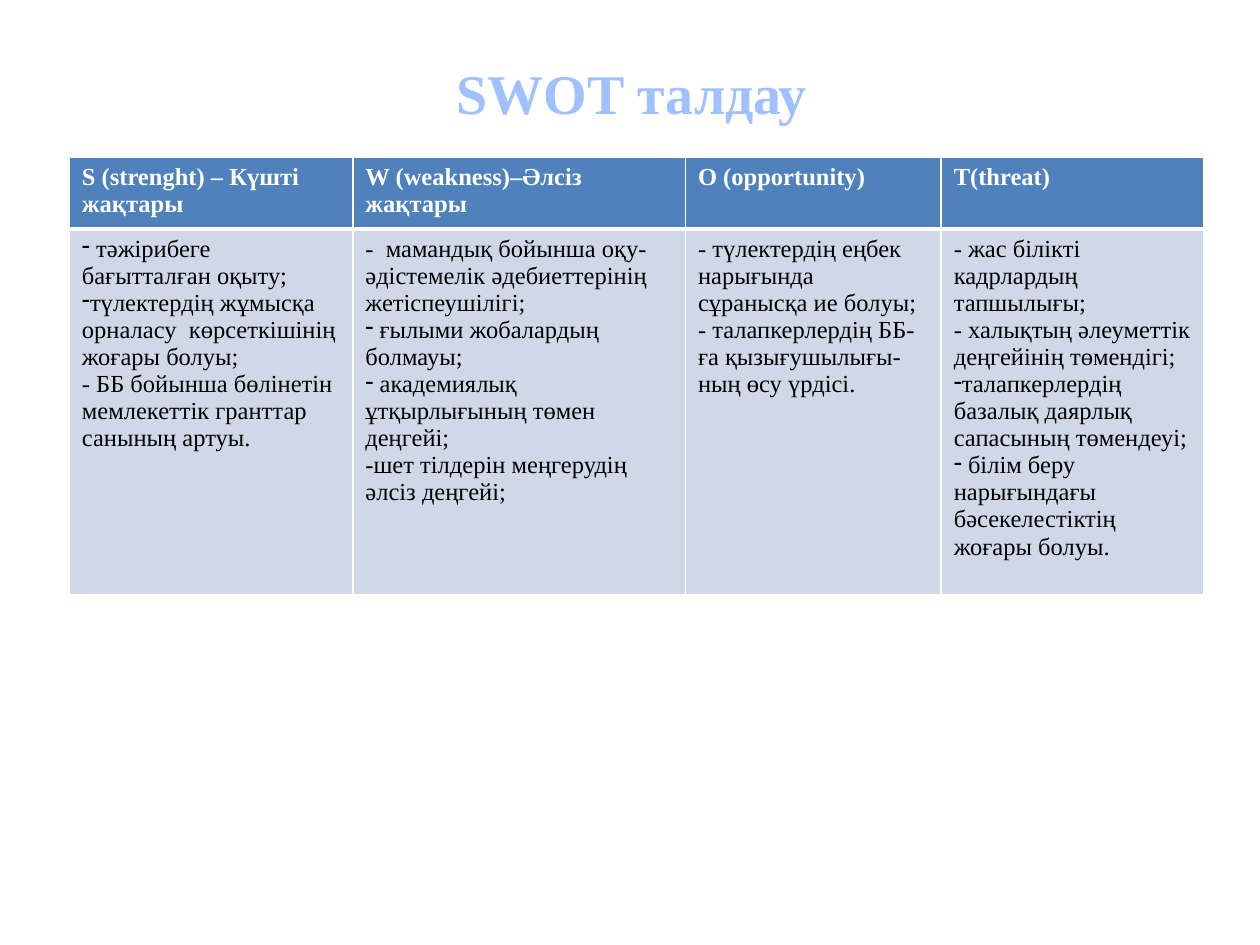
from dataclasses import dataclass

import pptx
import pptx.dml.color
import pptx.enum.text
import pptx.oxml.ns
import pptx.util
from lxml import etree
from pptx.util import Inches

FONT = "Times New Roman"
WHITE, BLACK = "FFFFFF", "000000"
TITLE_BLUE, HEADER_BLUE, BODY_BLUE = "A0C1FF", "4F81BD", "D0D8E8"
TITLE_FORMAT = {"name": FONT, "size": pptx.util.Pt(32), "bold": True}
HEADER_FORMAT = {"name": FONT, "size": pptx.util.Pt(14), "bold": True}
POINT_FORMAT = HEADER_FORMAT | {"bold": False}
HEADER_HEIGHT, BODY_HEIGHT = 0.54, 2.88


@dataclass(frozen=True)
class Point:
    text: str
    dash_bullet: bool = False


@dataclass(frozen=True)
class Aspect:
    heading: str
    width: float
    points: tuple[Point, ...]


ASPECTS = (
    Aspect("S (strenght) – Күшті жақтары", 2.25, (
        Point(" тәжірибеге бағытталған оқыту;", True),
        Point("түлектердің жұмысқа орналасу  көрсеткішінің жоғары болуы;", True),
        Point("- ББ бойынша бөлінетін мемлекеттік гранттар санының артуы."),
    )),
    Aspect("W (weakness)–Әлсіз жақтары", 2.64, (
        Point("-  мамандық бойынша оқу-әдістемелік әдебиеттерінің жетіспеушілігі;"),
        Point(" ғылыми жобалардың болмауы;", True),
        Point(" академиялық ұтқырлығының төмен деңгейі;", True),
        Point("-шет тілдерін меңгерудің әлсіз деңгейі;"),
    )),
    Aspect("O (opportunity)", 2.03, (
        Point("- түлектердің еңбек нарығында сұранысқа ие болуы;"),
        Point("- талапкерлердің ББ-ға қызығушылығы-ның өсу үрдісі."),
    )),
    Aspect("T(threat)", 2.08, (
        Point("- жас білікті кадрлардың тапшылығы;"),
        Point("- халықтың әлеуметтік деңгейінің төмендігі;"),
        Point("талапкерлердің базалық даярлық сапасының төмендеуі;", True),
        Point(" білім беру нарығындағы бәсекелестіктің жоғары болуы.", True),
    )),
)


def rgb(value: str) -> pptx.dml.color.RGBColor:
    return pptx.dml.color.RGBColor.from_string(value)


def add_child(parent, tag: str, **attributes: str):
    return etree.SubElement(parent, pptx.oxml.ns.qn(tag), attributes)


def write(paragraph, text: str, color: str, font_format: dict) -> None:
    run = paragraph.add_run()
    run.text = text
    for attribute, value in font_format.items():
        setattr(run.font, attribute, value)
    run.font.color.rgb = rgb(color)


def add_dash_bullet(paragraph) -> None:
    properties = paragraph._p.get_or_add_pPr()
    properties.set("marL", "0")
    properties.set("indent", "0")
    add_child(properties, "a:buFontTx")
    add_child(properties, "a:buChar", char="-")


def style_cell(cell, fill: str, top: float, bottom: float) -> None:
    """Set white borders, with top and bottom widths in points, and the fill."""
    properties = cell._tc.get_or_add_tcPr()
    for side, width in {"L": 1, "R": 1, "T": top, "B": bottom}.items():
        border = add_child(properties, f"a:ln{side}", w=str(pptx.util.Pt(width)))
        add_child(add_child(border, "a:solidFill"), "a:srgbClr", val=WHITE)
    cell.fill.solid()
    cell.fill.fore_color.rgb = rgb(fill)


def add_title(slide, text: str) -> None:
    frame = slide.shapes.add_textbox(
        Inches(0.5), Inches(0.3), Inches(9.03), Inches(0.87)).text_frame
    frame.word_wrap = True
    frame.vertical_anchor = pptx.enum.text.MSO_ANCHOR.MIDDLE
    heading = frame.paragraphs[0]
    heading.alignment = pptx.enum.text.PP_ALIGN.CENTER
    write(heading, text, TITLE_BLUE, TITLE_FORMAT)


def fill_aspect(header, body, aspect: Aspect) -> None:
    style_cell(header, HEADER_BLUE, top=1, bottom=3)
    write(header.text_frame.paragraphs[0], aspect.heading, WHITE, HEADER_FORMAT)
    style_cell(body, BODY_BLUE, top=3, bottom=1)
    frame = body.text_frame
    for index, point in enumerate(aspect.points):
        paragraph = frame.add_paragraph() if index else frame.paragraphs[0]
        if point.dash_bullet:
            add_dash_bullet(paragraph)
        write(paragraph, point.text, BLACK, POINT_FORMAT)


def add_swot_table(slide, aspects: tuple[Aspect, ...]) -> None:
    table = slide.shapes.add_table(
        2, len(aspects), Inches(0.55), Inches(1.25),
        Inches(sum(aspect.width for aspect in aspects)),
        Inches(HEADER_HEIGHT + BODY_HEIGHT)).table
    for row, height in zip(table.rows, (HEADER_HEIGHT, BODY_HEIGHT)):
        row.height = Inches(height)
    for column, aspect in enumerate(aspects):
        table.columns[column].width = Inches(aspect.width)
        fill_aspect(table.cell(0, column), table.cell(1, column), aspect)


def main() -> None:
    presentation = pptx.Presentation()
    presentation.slide_width = Inches(10)
    presentation.slide_height = Inches(7.5)
    slide = presentation.slides.add_slide(presentation.slide_layouts[6])
    add_title(slide, "SWOT талдау")
    add_swot_table(slide, ASPECTS)
    presentation.save("out.pptx")


if __name__ == "__main__":
    main()
